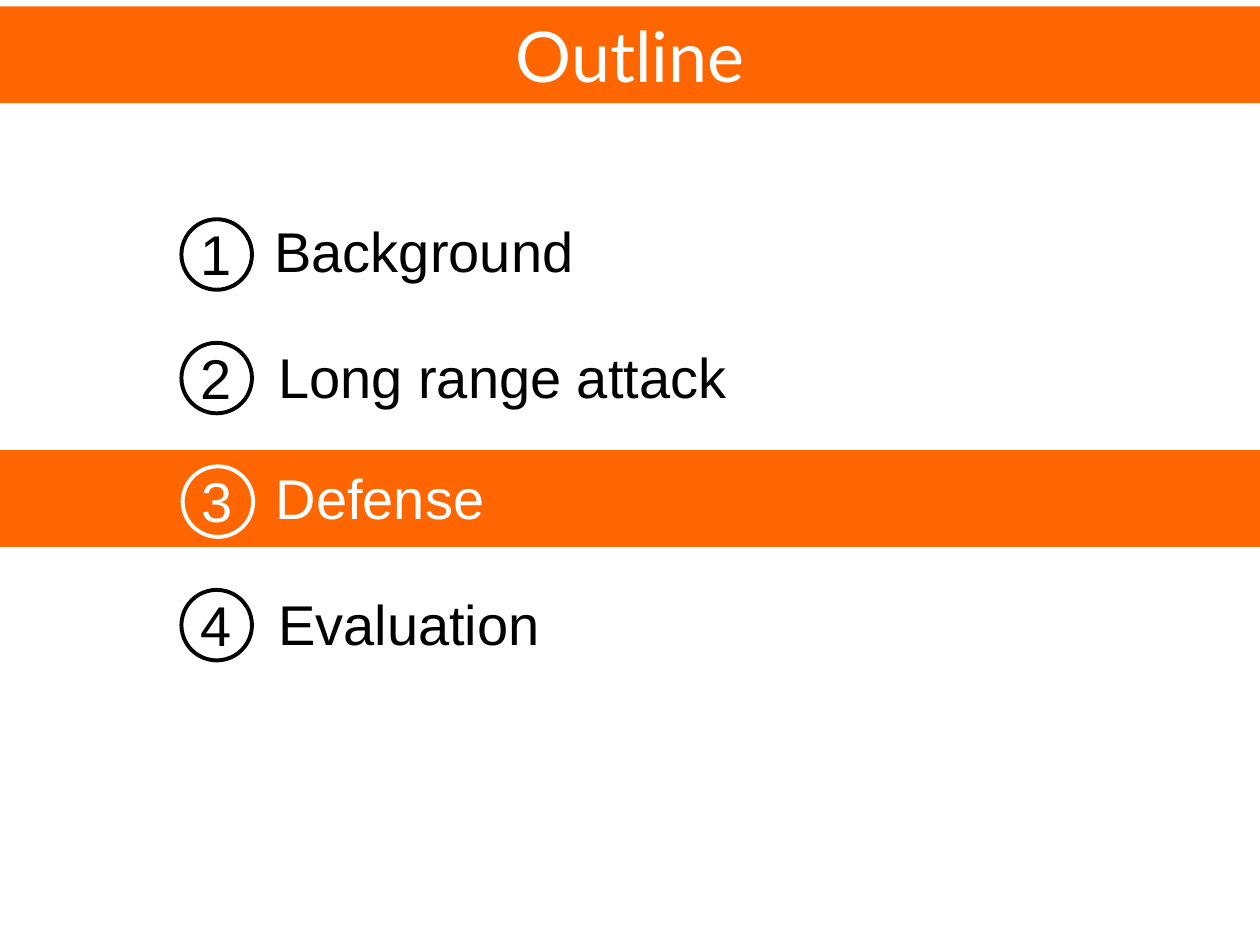
from pptx import Presentation
from pptx.dml.color import RGBColor
from pptx.enum.shapes import MSO_SHAPE
from pptx.enum.text import MSO_ANCHOR, PP_ALIGN
from pptx.util import Pt

COLORS = {"band": "FF6600", "dark": "000000", "light": "FFFFFF"}
WIDTH, HEIGHT = 720, 540
BAND = 55.4
LEFT, TOP, PITCH = 103.7, 125.3, 70.6
ITEMS = ["Background", "Long range attack", "Defense", "Evaluation"]
ACTIVE = 2


def color(name):
    return RGBColor.from_string(COLORS[name])


def style(shape, text, size, font, ink):
    frame = shape.text_frame
    frame.word_wrap = True
    para = frame.paragraphs[0]
    para.text = text
    para.font.size = Pt(size)
    para.font.name = font
    para.font.color.rgb = color(ink)
    return para


def add_band(shapes, top):
    band = shapes.add_shape(MSO_SHAPE.RECTANGLE, 0, Pt(top), Pt(WIDTH), Pt(BAND))
    band.shadow.inherit = False
    band.fill.solid()
    band.fill.fore_color.rgb = color("band")
    band.line.fill.background()
    return band


def add_title(shapes, text, top):
    band = add_band(shapes, top)
    band.text_frame.vertical_anchor = MSO_ANCHOR.MIDDLE
    style(band, text, 40, "Lato", "light").alignment = PP_ALIGN.CENTER


def add_text(shapes, text, left, top, width, ink):
    box = shapes.add_textbox(Pt(left), Pt(top), Pt(width), Pt(46))
    style(box, text, 32, "Arial", ink)


def add_item(shapes, number, text, left, top, gap, rise, active):
    """Place a circled number at left, top and its label gap points to the right."""
    group = shapes.add_group_shape().shapes
    ink = "light" if active else "dark"
    if active:
        add_band(group, top - 9.3)
    add_text(group, text, left + gap, top - rise, 440, ink)
    ring = group.add_shape(MSO_SHAPE.OVAL, Pt(left), Pt(top), Pt(40.3), Pt(40.3))
    ring.shadow.inherit = False
    ring.fill.background()
    ring.line.color.rgb = color(ink)
    ring.line.width = Pt(2.25)
    add_text(group, str(number), left + 3.6, top - 3.4, 42, ink)


def add_list(shapes, left, top):
    for row, text in enumerate(ITEMS):
        active = row == ACTIVE
        gap, rise = (48.2, 3.6) if row % 2 else (46.1, 5)
        shift = 0.7 if active else 0
        add_item(shapes, row + 1, text, left + shift, top + row * PITCH,
                 gap, rise, active)


def main():
    deck = Presentation()
    deck.slide_width, deck.slide_height = Pt(WIDTH), Pt(HEIGHT)
    shapes = deck.slides.add_slide(deck.slide_layouts[6]).shapes
    add_title(shapes, "Outline", 3.6)
    add_list(shapes, LEFT, TOP)
    deck.save("out.pptx")


if __name__ == "__main__":
    main()
